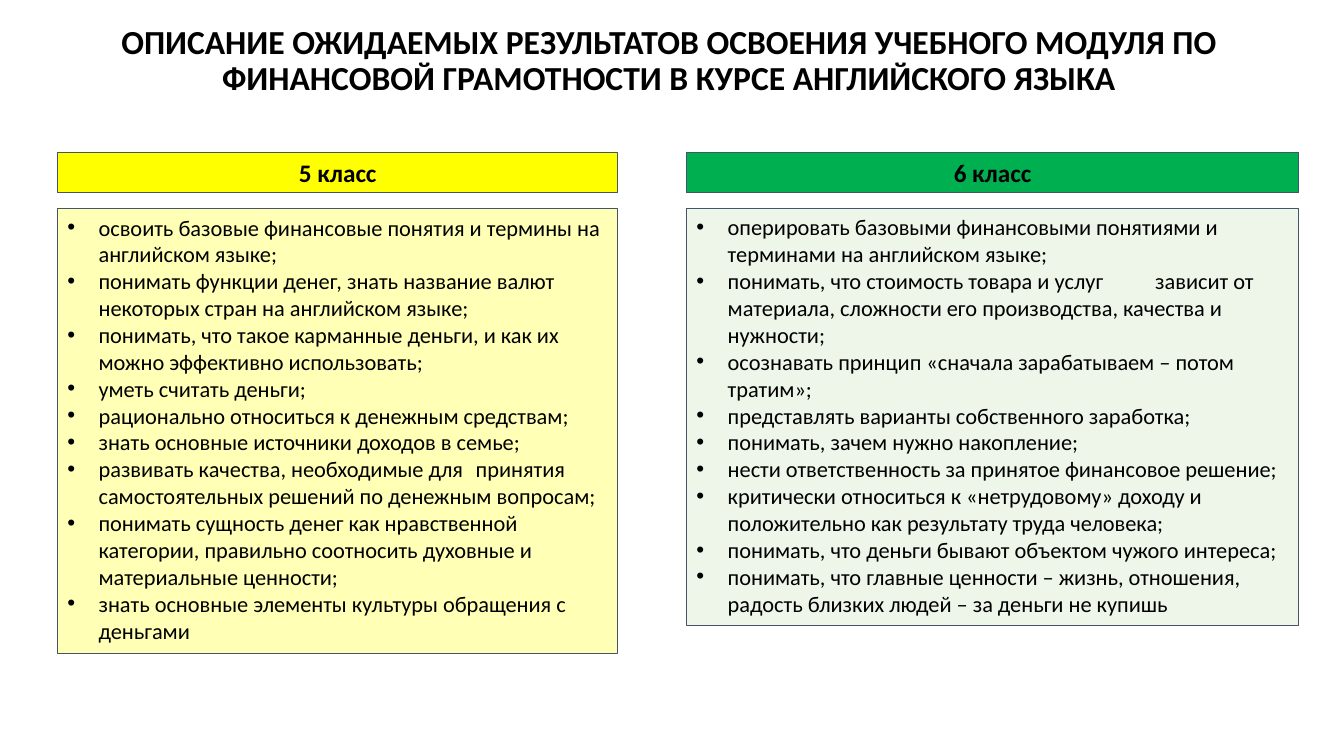
from lxml import etree
from pptx import Presentation
from pptx.dml.color import RGBColor
from pptx.enum.shapes import MSO_SHAPE
from pptx.enum.text import MSO_ANCHOR, MSO_AUTO_SIZE, PP_ALIGN
from pptx.oxml.ns import qn
from pptx.util import Inches, Pt

RECTANGLE = MSO_SHAPE.RECTANGLE
TOP, MIDDLE = MSO_ANCHOR.TOP, MSO_ANCHOR.MIDDLE
LEFT, CENTER = PP_ALIGN.LEFT, PP_ALIGN.CENTER
NO_AUTOFIT = MSO_AUTO_SIZE.NONE

FONT = "Calibri"
BLACK, BORDER = "000000", "44546A"
HEADER_TOP, HEADER_HEIGHT = 1.51, 0.4
LIST_TOP, LIST_OPACITY = 2.07, 29
BULLET_INDENT = 0.31

TITLE = ("ОПИСАНИЕ ОЖИДАЕМЫХ РЕЗУЛЬТАТОВ ОСВОЕНИЯ УЧЕБНОГО МОДУЛЯ ПО "
         "ФИНАНСОВОЙ ГРАМОТНОСТИ В КУРСЕ АНГЛИЙСКОГО ЯЗЫКА")

GRADES = [
    {
        "name": "5 класс", "left": 0.57, "width": 5.56, "list_height": 4.41,
        "header_fill": "FFFF00", "list_fill": "FFFF00",
        "results": [
            "освоить базовые финансовые понятия и термины на английском языке;",
            "понимать функции денег, знать название валют некоторых стран на английском языке;",
            "понимать, что такое карманные деньги, и как их можно эффективно использовать;",
            "уметь считать деньги;",
            "рационально относиться к денежным средствам;",
            "знать основные источники доходов в семье;",
            "развивать качества, необходимые для\t принятия самостоятельных решений "
            "по денежным вопросам;",
            "понимать сущность денег как нравственной категории, правильно соотносить "
            "духовные и материальные ценности;",
            "знать основные элементы культуры обращения с деньгами",
        ],
    },
    {
        "name": "6 класс", "left": 6.81, "width": 6.07, "list_height": 4.14,
        "header_fill": "00B050", "list_fill": "C5E0B4",
        "results": [
            "оперировать базовыми финансовыми понятиями и терминами на английском языке;",
            "понимать, что стоимость товара и услуг\t зависит от материала, сложности "
            "его производства, качества и нужности;",
            "осознавать принцип «сначала зарабатываем – потом тратим»;",
            "представлять варианты собственного заработка;",
            "понимать, зачем нужно накопление;",
            "нести ответственность за принятое финансовое решение;",
            "критически относиться к «нетрудовому» доходу и положительно как результату "
            "труда человека;",
            "понимать, что деньги бывают объектом чужого интереса;",
            "понимать, что главные ценности – жизнь, отношения, радость близких людей – "
            "за деньги не купишь",
        ],
    },
]


def color(hex_string):
    return RGBColor.from_string(hex_string)


def format_paragraph(paragraph, size, bold, alignment):
    paragraph.alignment = alignment
    font = paragraph.font
    font.name, font.size, font.bold = FONT, Pt(size), bold
    font.color.rgb = color(BLACK)


def add_bullet(paragraph):
    properties = paragraph._p.get_or_add_pPr()
    properties.set("marL", str(Inches(BULLET_INDENT)))
    properties.set("indent", str(-Inches(BULLET_INDENT)))
    etree.SubElement(properties, qn("a:buFont"), typeface="Arial")
    etree.SubElement(properties, qn("a:buChar"), char="•")


def set_opacity(shape, percent):
    fill_color = shape._element.spPr.find(qn("a:solidFill"))[0]
    etree.SubElement(fill_color, qn("a:alpha"), val=str(percent * 1000))


def add_box(slide, left, top, width, height, fill, anchor):
    box = slide.shapes.add_shape(
        RECTANGLE, Inches(left), Inches(top), Inches(width), Inches(height))
    box.shadow.inherit = False
    box.fill.solid()
    box.fill.fore_color.rgb = color(fill)
    box.line.color.rgb = color(BORDER)
    box.line.width = Pt(0.75)
    box.text_frame.word_wrap = True
    box.text_frame.vertical_anchor = anchor
    return box


def add_title(slide):
    title = slide.shapes.title
    title.left, title.top = Inches(0.27), Inches(0)
    title.width, title.height = Inches(12.73), Inches(1.22)
    frame = title.text_frame
    frame.text = TITLE
    frame.word_wrap = True
    frame.auto_size = NO_AUTOFIT
    frame.vertical_anchor = MIDDLE
    paragraph = frame.paragraphs[0]
    paragraph.line_spacing = 0.9
    format_paragraph(paragraph, 24, True, CENTER)


def add_grade(slide, grade):
    left, width = grade["left"], grade["width"]
    header = add_box(slide, left, HEADER_TOP, width, HEADER_HEIGHT,
                     grade["header_fill"], MIDDLE)
    header.text_frame.text = grade["name"]
    format_paragraph(header.text_frame.paragraphs[0], 18, True, CENTER)

    results = add_box(slide, left, LIST_TOP, width, grade["list_height"],
                      grade["list_fill"], TOP)
    set_opacity(results, LIST_OPACITY)
    results.text_frame.text = "\n".join(grade["results"])
    for paragraph in results.text_frame.paragraphs:
        add_bullet(paragraph)
        format_paragraph(paragraph, 16, False, LEFT)


def main():
    presentation = Presentation()
    presentation.slide_width = Inches(13.33)
    presentation.slide_height = Inches(7.5)
    title_only = presentation.slide_layouts[5]
    slide = presentation.slides.add_slide(title_only)
    add_title(slide)
    for grade in GRADES:
        add_grade(slide, grade)
    presentation.save("out.pptx")


if __name__ == "__main__":
    main()
